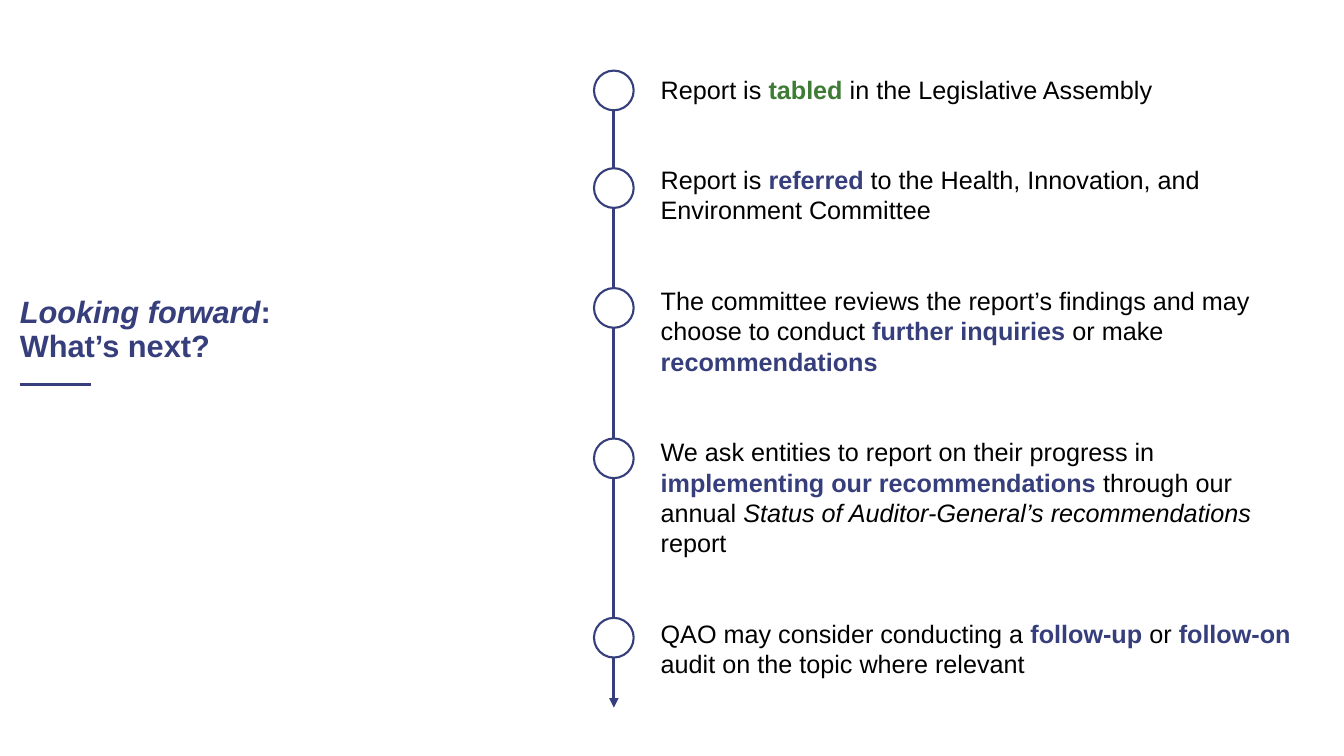
from dataclasses import dataclass

from lxml.etree import SubElement
from pptx import Presentation
from pptx.dml.color import RGBColor
from pptx.enum.shapes import MSO_CONNECTOR, MSO_SHAPE
from pptx.enum.text import MSO_ANCHOR, MSO_AUTO_SIZE, PP_ALIGN
from pptx.oxml.ns import qn
from pptx.util import Cm, Pt


@dataclass(frozen=True)
class Theme:
    navy: RGBColor = RGBColor(0x36, 0x3F, 0x7C)
    green: RGBColor = RGBColor(0x3E, 0x7B, 0x35)
    black: RGBColor = RGBColor(0, 0, 0)
    white: RGBColor = RGBColor(255, 255, 255)
    font: str = "Arial"
    head: float = 22
    body: float = 18
    lead: float = 21.6


@dataclass(frozen=True)
class Box:
    """A region, in centimetres."""
    left: float
    top: float
    width: float
    height: float


THEME = Theme()
KEY = {"color": THEME.navy, "bold": True}
DONE = {"color": THEME.green, "bold": True}
PLAIN = {}

# Each step: top of its marker in cm, then its runs
STEPS = [
    (1.78, [("Report is ", PLAIN), ("tabled", DONE),
            (" in the Legislative Assembly", PLAIN)]),
    (4.24, [("Report is ", PLAIN), ("referred", KEY),
            (" to the Health, Innovation, and Environment Committee", PLAIN)]),
    (7.26, [("The committee reviews the report’s findings and may choose "
             "to conduct ", PLAIN), ("further inquiries ", KEY),
            ("or make ", PLAIN), ("recommendations", KEY)]),
    (11.05, [("We ask entities to report on their progress in ", PLAIN),
             ("implementing our recommendations ", KEY),
             ("through our annual ", PLAIN),
             ("Status of Auditor-General’s recommendations ",
              {"italic": True}),
             ("report", PLAIN)]),
    (15.57, [("QAO may consider conducting a ", PLAIN), ("follow-up", KEY),
             (" or ", PLAIN), ("follow-on", KEY),
             (" audit on the topic where relevant", PLAIN)]),
]


def write(para, text, size=THEME.body, color=THEME.black, bold=False,
          italic=False):
    run = para.add_run()
    run.text = text
    font = run.font
    font.name, font.size = THEME.font, Pt(size)
    font.bold, font.italic = bold, italic
    font.color.rgb = color


def place(shape, box):
    shape.left, shape.top = Cm(box.left), Cm(box.top)
    shape.width, shape.height = Cm(box.width), Cm(box.height)


def frame(shape, anchor, side, edge):
    """Set anchor and insets (in cm), and return the text frame."""
    text = shape.text_frame
    text.word_wrap, text.auto_size = True, MSO_AUTO_SIZE.NONE
    text.vertical_anchor = anchor
    text.margin_left = text.margin_right = Cm(side)
    text.margin_top = text.margin_bottom = Cm(edge)
    return text


def rule(slide, start, end, width, arrow=False):
    line = slide.shapes.add_connector(
        MSO_CONNECTOR.STRAIGHT, *map(Cm, start + end))
    line.line.color.rgb = THEME.navy
    line.line.width = Pt(width)
    if arrow:
        SubElement(line.line._get_or_add_ln(), qn("a:tailEnd"),
                   type="triangle")
    SubElement(line._element.spPr, qn("a:effectLst"))


def heading(slide, box):
    title = slide.shapes.title
    place(title, box)
    para = frame(title, MSO_ANCHOR.BOTTOM, 0, 0).paragraphs[0]
    para.alignment, para.line_spacing = PP_ALIGN.LEFT, 0.9
    look = {"size": THEME.head, "color": THEME.navy, "bold": True}
    write(para, "Looking forward", italic=True, **look)
    write(para, ": What’s next?", **look)
    under = box.top + box.height + 0.53
    rule(slide, (box.left, under), (box.left + 1.8, under), 2)


def step_list(slide, box):
    body = slide.placeholders[1]
    place(body, box)
    text = frame(body, MSO_ANCHOR.TOP, 0.25, 0.13)
    for index, (_, runs) in enumerate(STEPS):
        para = text.add_paragraph() if index else text.paragraphs[0]
        props = para._p.get_or_add_pPr()
        props.set("marL", "0")
        props.set("indent", "0")
        SubElement(props, qn("a:buNone"))
        para.alignment = PP_ALIGN.LEFT
        para.line_spacing = Pt(THEME.lead)
        para.space_before = Pt(2 * THEME.lead if index else 0)
        para.space_after = Pt(0)
        for words, look in runs:
            write(para, words, **look)


def time_line(slide, box):
    """Draw the arrow down the middle of the box, with a marker per step."""
    mid = box.left + box.width / 2
    rule(slide, (mid, box.top), (mid, box.top + box.height), 2.25, arrow=True)
    for top, _ in STEPS:
        dot = slide.shapes.add_shape(
            MSO_SHAPE.OVAL, Cm(box.left), Cm(top), Cm(box.width),
            Cm(box.width))
        dot.shadow.inherit = False
        dot.fill.solid()
        dot.fill.fore_color.rgb = THEME.white
        dot.line.color.rgb = THEME.navy
        dot.line.width = Pt(1.5)


def main():
    deck = Presentation()
    deck.slide_width, deck.slide_height = Cm(33.87), Cm(19.05)
    slide = deck.slides.add_slide(deck.slide_layouts[1])
    heading(slide, Box(0.5, 6.17, 6.76, 3))
    step_list(slide, Box(16.4, 1.73, 16.41, 15.65))
    time_line(slide, Box(14.97, 1.9, 1, 15.93))
    deck.save("out.pptx")


if __name__ == "__main__":
    main()
